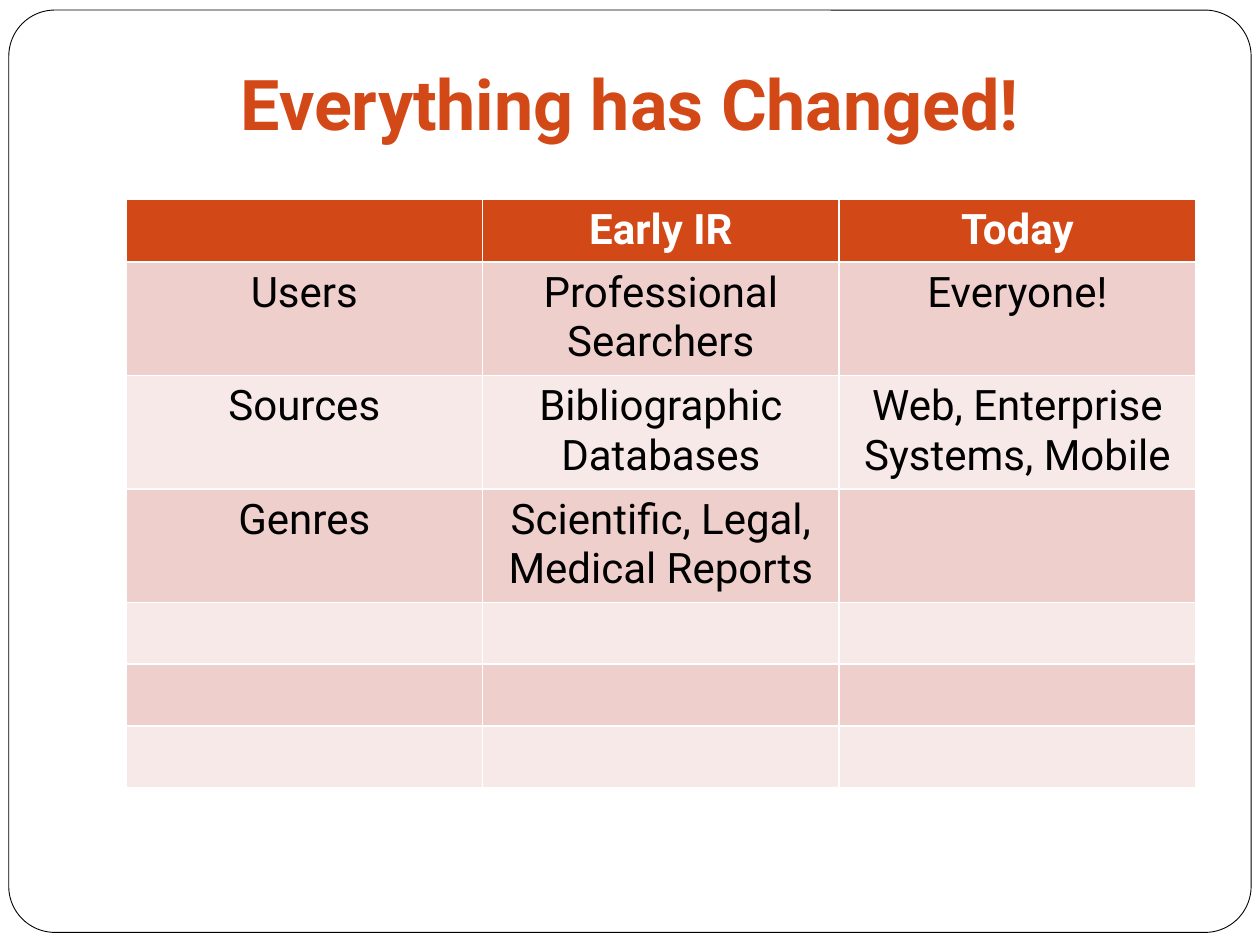
from pptx import Presentation
from pptx.dml.color import RGBColor
from pptx.enum.shapes import MSO_SHAPE
from pptx.enum.text import MSO_ANCHOR, PP_ALIGN
from pptx.util import Inches, Pt


def color(value):
    return RGBColor.from_string(value)


def write(para, text, size, value, bold):
    para.alignment = PP_ALIGN.CENTER
    span = para.add_run()
    span.text = text
    span.font.name = "Roboto"
    span.font.size = Pt(size)
    span.font.bold = bold
    span.font.color.rgb = color(value)


deck = Presentation()
deck.slide_width = Inches(10)
deck.slide_height = Inches(7.5)
page = deck.slides.add_slide(deck.slide_layouts[6])

frame = page.shapes.add_shape(
    MSO_SHAPE.ROUNDED_RECTANGLE, Inches(0.07), Inches(0.08), Inches(9.86), Inches(7.32)
)
frame.adjustments[0] = 0.05
frame.shadow.inherit = False
frame.fill.solid()
frame.fill.fore_color.rgb = color("FFFFFF")
frame.line.color.rgb = color("000000")
frame.line.width = Pt(0.5)

title = page.shapes.add_textbox(Inches(0.75), Inches(0), Inches(8.5), Inches(1.25))
title.text_frame.word_wrap = True
title.text_frame.vertical_anchor = MSO_ANCHOR.BOTTOM
title.text_frame.margin_bottom = Inches(0.1)
write(title.text_frame.paragraphs[0], "Everything has Changed!", 40, "D34817", True)

rows = [
    ["", "Early IR", "Today"],
    ["Users", "Professional Searchers", "Everyone!"],
    ["Sources", "Bibliographic\nDatabases", "Web, Enterprise Systems, Mobile"],
    ["Genres", "Scientific, Legal, Medical Reports", ""],
    ["", "", ""],
    ["", "", ""],
    ["", "", ""],
]
heights = [0.49, 0.88, 0.88, 0.88, 0.49, 0.49, 0.49]

table = page.shapes.add_table(
    len(rows), 3, Inches(1), Inches(1.58), Inches(8.49), Inches(sum(heights))
).table
for column in table.columns:
    column.width = Inches(2.83)

for row_index, texts in enumerate(rows):
    table.rows[row_index].height = Inches(heights[row_index])
    header = row_index == 0
    band = "EFCFCC" if row_index % 2 else "F7E9E8"
    for column_index, text in enumerate(texts):
        cell = table.cell(row_index, column_index)
        cell.fill.solid()
        cell.fill.fore_color.rgb = color("D34817" if header else band)
        if not text:
            continue
        for line_index, line in enumerate(text.split("\n")):
            body = cell.text_frame
            para = body.add_paragraph() if line_index else body.paragraphs[0]
            write(para, line, 24, "FFFFFF" if header else "000000", header)

deck.save("out.pptx")
